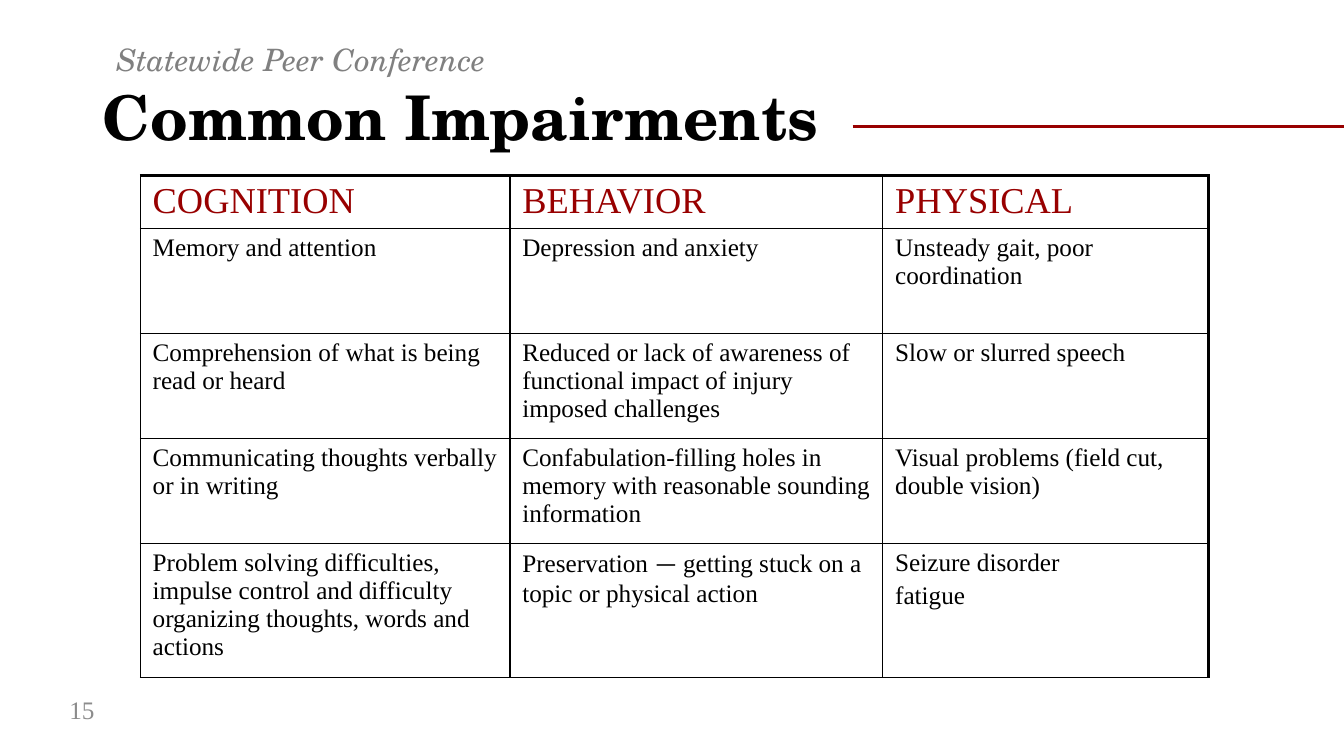
from dataclasses import dataclass

from lxml import etree
from pptx import Presentation
from pptx.dml.color import RGBColor
from pptx.enum import shapes, text
from pptx.oxml import ns
from pptx.util import Pt


@dataclass(frozen=True)
class Theme:
    heading: str = "TeX Gyre Schola"
    body: str = "Times New Roman"
    dash: str = "Calibri"
    black: str = "000000"
    white: str = "FFFFFF"
    red: str = "980000"
    kicker_grey: str = "808080"
    number_grey: str = "8C8C8C"
    title_size: float = 44
    header_size: float = 26
    kicker_size: float = 22
    body_size: float = 18
    thin: float = 1
    thick: float = 2.25


THEME = Theme()

COLUMNS = [264, 266.4, 232.6]
ROWS = [38, 75, 75, 75, 95.6]
# A cell is a list of paragraphs, a paragraph a list of (text, font) runs,
# either shortened to a plain string where one is enough.
IMPAIRMENTS = [
    ["COGNITION", "BEHAVIOR", "PHYSICAL"],
    ["Memory and attention", "Depression and anxiety", "Unsteady gait, poor coordination"],
    ["Comprehension of what is being read or heard",
     "Reduced or lack of awareness of functional impact of injury imposed challenges",
     "Slow or slurred speech"],
    ["Communicating thoughts verbally or in writing",
     "Confabulation-filling holes in memory with reasonable sounding information",
     "Visual problems (field cut, double vision)"],
    ["Problem solving difficulties, impulse control and difficulty organizing "
     "thoughts, words and actions",
     [[("Preservation ", THEME.body), ("— ", THEME.dash),
       ("getting stuck on a topic or physical action", THEME.body)]],
     ["Seizure disorder", "fatigue"]],
]


def rgb(value):
    return RGBColor.from_string(value)


def write(tf, content, *, font=THEME.body, size=THEME.body_size, color=THEME.black,
          bold=False, italic=False, line_spacing=1.0, gap=0):
    """Fill a text frame; gap is the space before each paragraph but the first."""
    tf.word_wrap = True
    paragraphs = [content] if isinstance(content, str) else content
    for i, runs in enumerate(paragraphs):
        p = tf.add_paragraph() if i else tf.paragraphs[0]
        p.alignment = text.PP_ALIGN.LEFT
        p.line_spacing = line_spacing
        p.space_before = Pt(gap if i else 0)
        for words, name in [(runs, font)] if isinstance(runs, str) else runs:
            r = p.add_run()
            r.text = words
            r.font.name, r.font.size = name, Pt(size)
            r.font.bold, r.font.italic = bold, italic
            r.font.color.rgb = rgb(color)


def place(sp, left, top, width, height, anchor):
    sp.left, sp.top, sp.width, sp.height = map(Pt, (left, top, width, height))
    sp.text_frame.auto_size = text.MSO_AUTO_SIZE.NONE
    sp.text_frame.vertical_anchor = anchor


def remove_bullet(p):
    p_pr = p._p.get_or_add_pPr()
    p_pr.set("marL", "0")
    p_pr.set("indent", "0")
    etree.SubElement(p_pr, ns.qn("a:buNone"))


def add_headings(s):
    title, kicker = s.shapes.title, s.placeholders[1]
    place(title, 66.2, 46.8, 828, 78.5, text.MSO_ANCHOR.MIDDLE)
    write(title.text_frame, "Common Impairments", font=THEME.heading,
          size=THEME.title_size, bold=True, line_spacing=0.9)
    place(kicker, 76, 28.8, 818, 27.4, text.MSO_ANCHOR.TOP)
    remove_bullet(kicker.text_frame.paragraphs[0])
    write(kicker.text_frame, "Statewide Peer Conference", font=THEME.heading,
          size=THEME.kicker_size, color=THEME.kicker_grey, italic=True, line_spacing=0.9)


def add_slide_number(s):
    sp = s.shapes.add_textbox(0, 0, 0, 0)
    place(sp, 42.5, 492.5, 42.5, 28.8, text.MSO_ANCHOR.MIDDLE)
    write(sp.text_frame, "15", color=THEME.number_grey)


def add_rule(s):
    rule = s.shapes.add_connector(shapes.MSO_CONNECTOR.STRAIGHT,
                                  Pt(609), Pt(90.2), Pt(960), Pt(90.2))
    rule.line.color.rgb = rgb(THEME.red)
    rule.line.width = Pt(THEME.thick)
    etree.SubElement(rule._element.spPr, ns.qn("a:effectLst"))


def set_borders(cell, **widths):
    tc_pr = cell._tc.get_or_add_tcPr()
    for side in "LRTB":
        ln = etree.SubElement(tc_pr, ns.qn(f"a:ln{side}"),
                              w=str(Pt(widths.get(side, THEME.thin))))
        fill = etree.SubElement(ln, ns.qn("a:solidFill"))
        etree.SubElement(fill, ns.qn("a:srgbClr"), val=THEME.black)


def add_impairments_table(s):
    frame = s.shapes.add_table(len(ROWS), len(COLUMNS), Pt(100.3), Pt(125.5),
                               Pt(sum(COLUMNS)), Pt(sum(ROWS)))
    table = frame.table
    table.first_row = table.horz_banding = False
    for column, width in zip(table.columns, COLUMNS):
        column.width = Pt(width)
    for i, (row, height) in enumerate(zip(table.rows, ROWS)):
        row.height = Pt(height)
        for j, cell in enumerate(row.cells):
            set_borders(cell, T=THEME.thin if i else THEME.thick,
                        R=THEME.thick if j == len(COLUMNS) - 1 else THEME.thin)
            cell.fill.solid()
            cell.fill.fore_color.rgb = rgb(THEME.white)
            cell.margin_left = cell.margin_right = Pt(8.8)
            cell.margin_top = cell.margin_bottom = Pt(3.6)
            write(cell.text_frame, IMPAIRMENTS[i][j], gap=3.6,
                  size=THEME.body_size if i else THEME.header_size,
                  color=THEME.black if i else THEME.red)


def main():
    prs = Presentation()
    prs.slide_width, prs.slide_height = Pt(960), Pt(540)
    s = prs.slides.add_slide(prs.slide_layouts[1])
    add_headings(s)
    add_slide_number(s)
    add_impairments_table(s)
    add_rule(s)
    prs.save("out.pptx")


if __name__ == "__main__":
    main()
